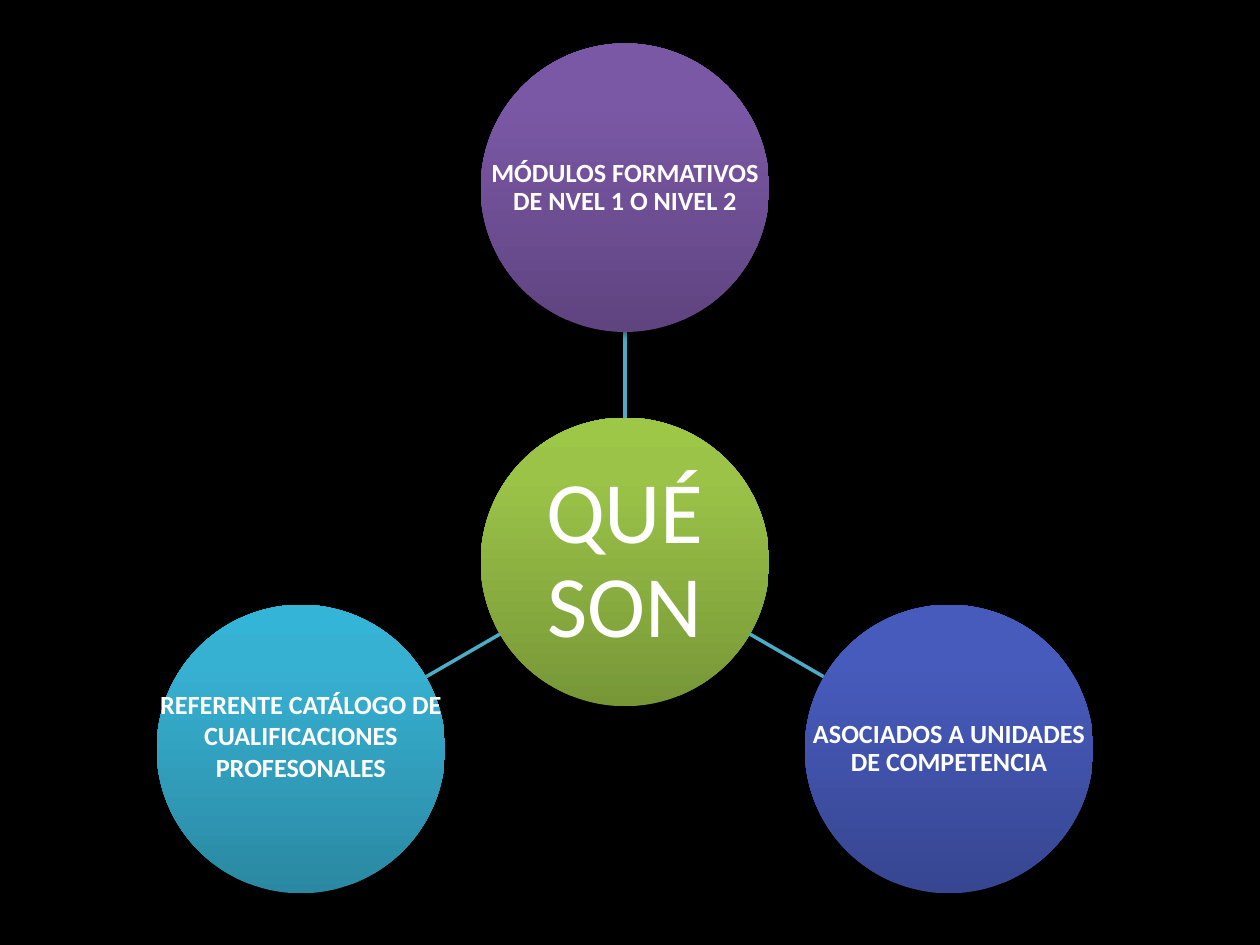
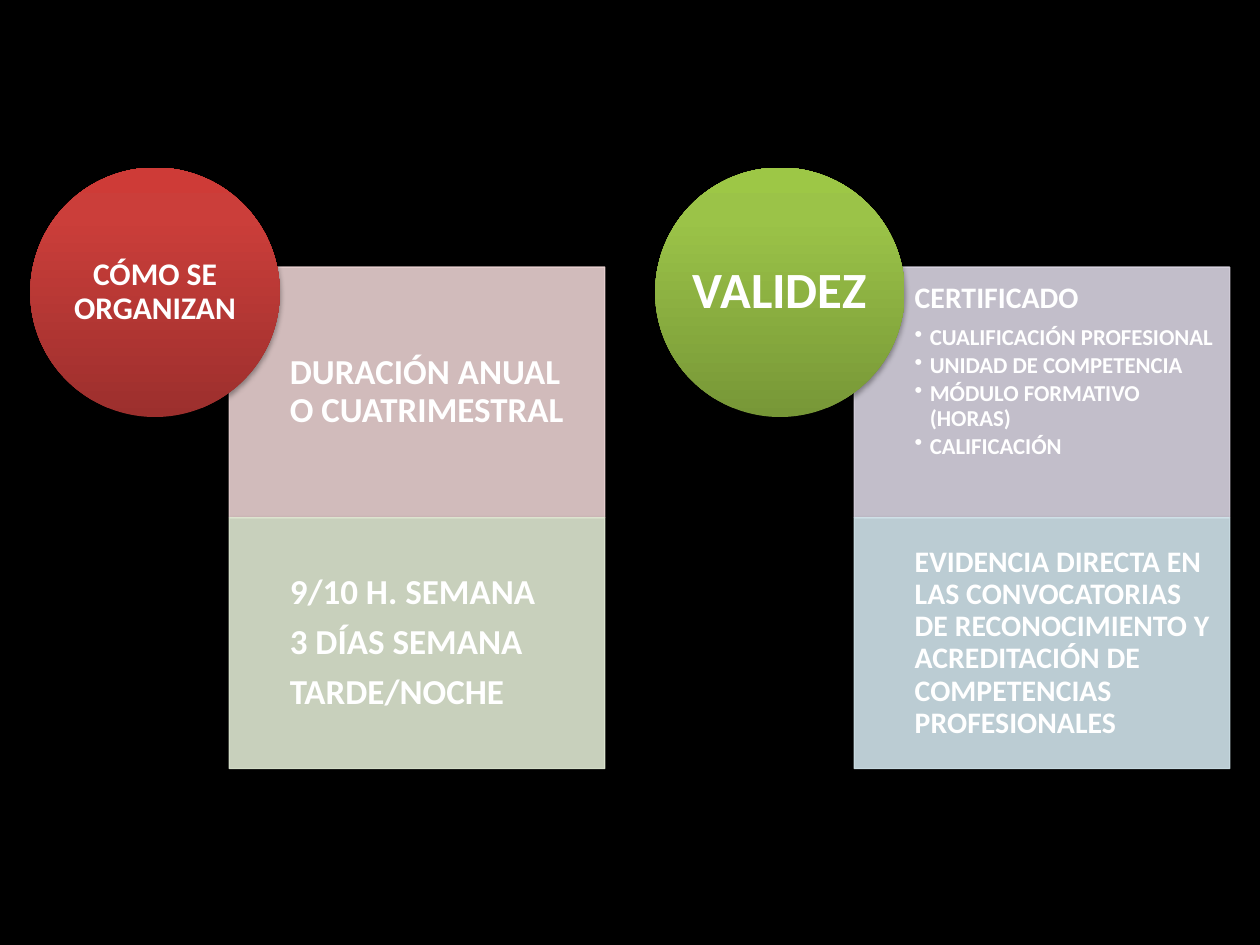
from copy import deepcopy
from dataclasses import dataclass
from math import cos, radians, sin

from lxml import etree
from pptx import Presentation
from pptx.dml.color import RGBColor
from pptx.enum.shapes import MSO_CONNECTOR, MSO_SHAPE
from pptx.enum.text import MSO_ANCHOR, PP_ALIGN
from pptx.oxml.ns import qn
from pptx.util import Inches, Pt

ELLIPSE = MSO_SHAPE.OVAL
RECTANGLE = MSO_SHAPE.RECTANGLE
STRAIGHT = MSO_CONNECTOR.STRAIGHT
TOP = MSO_ANCHOR.TOP
MIDDLE = MSO_ANCHOR.MIDDLE
LEFT = PP_ALIGN.LEFT
CENTER = PP_ALIGN.CENTER


@dataclass(frozen=True)
class Theme:
    """Colours, font and type sizes shared by the slides."""

    font: str = "Calibri"
    background: str = "000000"
    text: str = "FFFFFF"
    spoke: str = "4BACC6"
    green: tuple = ("779737", "9BC348", "9DC746")
    purple: tuple = ("5F4480", "7B58A6", "7C57A8")
    blue: tuple = ("374691", "475BBC", "455ABF")
    cyan: tuple = ("2A88A2", "37B1D2", "34B4D6")
    red: tuple = ("9C2F2D", "CB3E3A", "CE3B37")
    pale_red: str = "E8D0D0"
    pale_green: str = "DEE7D1"
    pale_purple: str = "D8D3E0"
    pale_blue: str = "D0E3EA"
    hub_size: int = 50
    spoke_size: int = 15
    heading_size: int = 18
    large_heading_size: int = 29
    panel_size: int = 20
    small_panel_size: int = 17
    bullet_size: int = 13


THEME = Theme()
GRADIENT_POSITIONS = (0, 0.8, 1)


def color(value):
    """Return a colour from its hexadecimal form."""
    return RGBColor.from_string(value)


def add_slide(presentation):
    """Add a blank slide with the shared background."""
    slide = presentation.slides.add_slide(presentation.slide_layouts[6])
    slide.background.fill.solid()
    slide.background.fill.fore_color.rgb = color(THEME.background)
    return slide


def add_shadow(shape):
    """Give a shape the soft shadow that falls below it."""
    shape.shadow.inherit = False
    effects = shape._element.spPr.find(qn("a:effectLst"))
    shadow = etree.SubElement(effects, qn("a:outerShdw"), blurRad=str(Pt(3.1)),
                              dist=str(Pt(1.8)), dir="5400000", rotWithShape="0")
    shade = etree.SubElement(shadow, qn("a:srgbClr"), val="000000")
    etree.SubElement(shade, qn("a:alpha"), val="35000")


def fill_gradient(shape, colors):
    """Fill a shape with a three-stop gradient running upwards."""
    shape.fill.gradient()
    shape.fill.gradient_angle = 90
    stop_list = shape._element.spPr.find(qn("a:gradFill")).find(qn("a:gsLst"))
    stop_list.append(deepcopy(stop_list[-1]))
    for stop, position, value in zip(shape.fill.gradient_stops, GRADIENT_POSITIONS, colors):
        stop.position = position
        stop.color.rgb = color(value)


def set_margins(text_frame, left, top, right, bottom):
    """Set the four text margins in inches."""
    text_frame.margin_left = Inches(left)
    text_frame.margin_top = Inches(top)
    text_frame.margin_right = Inches(right)
    text_frame.margin_bottom = Inches(bottom)


def format_paragraph(paragraph, size, bold=True, align=LEFT, line_spacing=0.9, gap=0.35):
    """Apply the shared text style, with a gap proportional to the size."""
    paragraph.alignment = align
    paragraph.line_spacing = line_spacing
    paragraph.space_after = Pt(size * gap)
    for run in paragraph.runs:
        run.font.name = THEME.font
        run.font.size = Pt(size)
        run.font.bold = bold
        run.font.color.rgb = color(THEME.text)


def add_bullet(paragraph):
    """Give a paragraph a round bullet and a hanging indent."""
    properties = paragraph._p.get_or_add_pPr()
    properties.set("marL", str(Inches(0.12)))
    properties.set("indent", str(Inches(-0.12)))
    etree.SubElement(properties, qn("a:buChar"), char="•")


def add_circle(slide, left, top, diameter, colors, text, size,
               bold=True, margin=0.01, lift=0, line_spacing=0.9):
    """Add a gradient circle with a label as wide as the circle."""
    box = [Inches(length) for length in (left, top, diameter, diameter)]
    circle = slide.shapes.add_shape(ELLIPSE, *box)
    fill_gradient(circle, colors)
    circle.line.fill.background()
    add_shadow(circle)
    text_frame = slide.shapes.add_textbox(*box).text_frame
    text_frame.word_wrap = True
    text_frame.vertical_anchor = MIDDLE
    set_margins(text_frame, margin, margin, margin, margin + 2 * lift)
    text_frame.text = text
    format_paragraph(text_frame.paragraphs[0], size, bold, CENTER, line_spacing)


def add_spoke(slide, start, end):
    """Add a line between two points."""
    points = [Inches(length) for length in (*start, *end)]
    connector = slide.shapes.add_connector(STRAIGHT, *points)
    connector.line.color.rgb = color(THEME.spoke)
    connector.line.width = Pt(2)
    etree.SubElement(connector._element.spPr, qn("a:effectLst"))


def add_panel(slide, left, top, width, height, fill, lines, size, bullets=()):
    """Add a translucent panel with headings and optional bullets."""
    panel = slide.shapes.add_shape(
        RECTANGLE, Inches(left), Inches(top), Inches(width), Inches(height))
    panel.fill.solid()
    panel.fill.fore_color.rgb = color(fill)
    panel.line.color.rgb = color(fill)
    panel.line.width = Pt(0.75)
    for shade in panel._element.spPr.iter(qn("a:srgbClr")):
        etree.SubElement(shade, qn("a:alpha"), val="90000")
    add_shadow(panel)
    text_frame = panel.text_frame
    text_frame.word_wrap = True
    text_frame.vertical_anchor = TOP if bullets else MIDDLE
    margin = size * 0.0075
    set_margins(text_frame, 0.48, margin, margin, margin)
    text_frame.text = "\n".join((*lines, *bullets))
    for index, paragraph in enumerate(text_frame.paragraphs):
        if index < len(lines):
            format_paragraph(paragraph, size)
        else:
            paragraph.level = 1
            format_paragraph(paragraph, THEME.bullet_size, gap=0.15)
            add_bullet(paragraph)


def point_around(center, angle, distance):
    """Return the point at an angle and distance from a centre."""
    return (center[0] + distance * cos(radians(angle)),
            center[1] + distance * sin(radians(angle)))


def build_definition(presentation):
    """Build the hub with three satellites."""
    slide = add_slide(presentation)
    center, diameter, orbit = (4.96, 4.46), 2.29, 2.97
    radius = diameter / 2
    add_circle(slide, center[0] - radius, center[1] - radius, diameter, THEME.green,
               "QUÉ SON", THEME.hub_size, bold=False, margin=0.03)
    satellites = (
        ("MÓDULOS FORMATIVOS DE NVEL 1 O NIVEL 2", THEME.purple, {}),
        ("ASOCIADOS A UNIDADES DE COMPETENCIA", THEME.blue, {}),
        ("REFERENTE CATÁLOGO DE CUALIFICACIONES PROFESONALES", THEME.cyan,
         {"lift": 0.11, "line_spacing": 1.0}),
    )
    for index, (text, colors, options) in enumerate(satellites):
        angle = -90 + index * 360 / len(satellites)
        add_spoke(slide, point_around(center, angle, radius),
                  point_around(center, angle, orbit - radius))
        x, y = point_around(center, angle, orbit)
        add_circle(slide, x - radius, y - radius, diameter, colors,
                   text, THEME.spoke_size, **options)


def build_organization(presentation):
    """Build two headings, each with a stack of two panels."""
    slide = add_slide(presentation)
    groups = (
        ("CÓMO SE ORGANIZAN", THEME.heading_size, THEME.red, THEME.panel_size, (
            (THEME.pale_red, ("DURACIÓN ANUAL O CUATRIMESTRAL",), ()),
            (THEME.pale_green, ("9/10 H. SEMANA", "3 DÍAS SEMANA", "TARDE/NOCHE"), ()),
        )),
        ("VALIDEZ", THEME.large_heading_size, THEME.green, THEME.small_panel_size, (
            (THEME.pale_purple, ("CERTIFICADO",),
             ("CUALIFICACIÓN PROFESIONAL", "UNIDAD DE COMPETENCIA",
              "MÓDULO FORMATIVO (HORAS)", "CALIFICACIÓN")),
            (THEME.pale_blue,
             ("EVIDENCIA DIRECTA EN LAS CONVOCATORIAS DE RECONOCIMIENTO Y "
              "ACREDITACIÓN DE COMPETENCIAS PROFESIONALES",), ()),
        )),
    )
    panel_height = 1.99
    for column, (heading, heading_size, colors, panel_size, panels) in enumerate(groups):
        left = 0.24 + column * 4.96
        for row, (fill, lines, bullets) in enumerate(panels):
            add_panel(slide, left + 1.58, 2.12 + row * panel_height, 2.98, panel_height,
                      fill, lines, panel_size, bullets)
        add_circle(slide, left, 1.33, 1.98, colors, heading, heading_size, margin=0)


def main():
    """Build and save the presentation."""
    presentation = Presentation()
    presentation.slide_width = Inches(10)
    presentation.slide_height = Inches(7.5)
    build_definition(presentation)
    build_organization(presentation)
    presentation.save("out.pptx")


if __name__ == "__main__":
    main()
